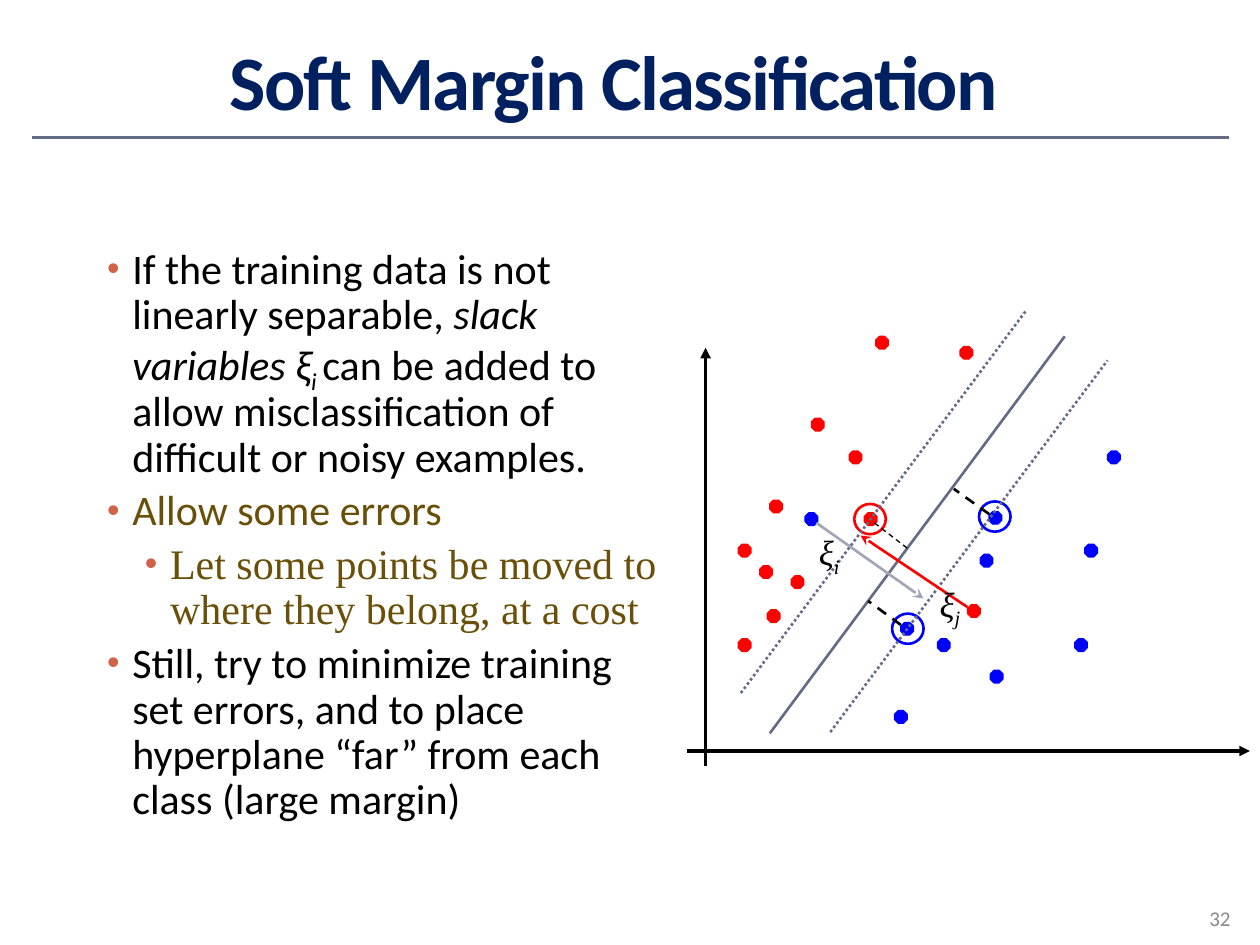
"""Build the slide on soft margin classification."""
from lxml.etree import SubElement as sub
from pptx import Presentation
from pptx.dml.color import RGBColor as RGB
from pptx.enum.dml import MSO_LINE as DASH
from pptx.enum.shapes import MSO_CONNECTOR as CONN, MSO_SHAPE as SHAPE
from pptx.enum.text import MSO_ANCHOR as ANCHOR, MSO_AUTO_SIZE as FIT, PP_ALIGN as ALIGN
from pptx.oxml.ns import qn
from pptx.util import Pt

PX = 9144
HUE = {"navy": "002060", "slate": "646B86", "pale": "A0A5B8", "black": "000000",
       "red": "FF0000", "blue": "0000FF", "olive": "694F07", "rust": "D16349",
       "gray": "898989"}
SANS, SERIF = "Calibri", "Times New Roman"


def add_run(para, text, size, face, hue, slant=False, drop=False):
    run = para.add_run()
    run.text = text
    font = run.font
    font.size, font.name, font.italic = Pt(size), face, slant
    font.color.rgb = RGB.from_string(HUE[hue])
    if drop:
        run._r.get_or_add_rPr().set("baseline", "-25000")
    return run


def add_line(ends, hue, width, dash=None, head=None):
    link = slide.shapes.add_connector(CONN.STRAIGHT, *[n * PX for n in ends])
    link.line.color.rgb = RGB.from_string(HUE[hue])
    link.line.width = Pt(width)
    if dash:
        link.line.dash_style = dash
    if head:
        sub(link.line._get_or_add_ln(), qn("a:tailEnd"), type=head)
    sub(link._element.spPr, qn("a:effectLst"))


deck = Presentation()
deck.slide_width, deck.slide_height = 1000 * PX, 750 * PX
slide = deck.slides.add_slide(deck.slide_layouts[1])

add_line((25, 109, 975, 109), "slate", 1.5)

title, body = slide.shapes.title, slide.placeholders[1]
for holder, box in ((title, (50, 17, 900, 92)), (body, (75, 192, 458, 533))):
    holder.left, holder.top, holder.width, holder.height = [n * PX for n in box]
    holder.text_frame.auto_size = FIT.NONE

title.text_frame.vertical_anchor = ANCHOR.MIDDLE
title.text_frame.margin_right = 36 * PX
para = title.text_frame.paragraphs[0]
para.alignment = ALIGN.CENTER
run = add_run(para, "Soft Margin Classification", 44, SANS, "navy")
run.font.bold = True
run._r.get_or_add_rPr().set("spc", "-100")

points = [
    (0, [("If the training data is not linearly separable, ", SANS, "black"),
         ("slack variables ξ", SANS, "black", True),
         ("i ", SANS, "black", True, True),
         ("can be added to allow misclassification of difficult or noisy examples.",
          SANS, "black")]),
    (0, [("Allow some errors", SANS, "olive")]),
    (1, [("Let some points be moved to where they belong, at a cost", SERIF, "olive")]),
    (0, [("Still, try to minimize training set errors, and to place hyperplane “far” "
          "from each class (large margin)", SANS, "black")]),
]
for row, (level, runs) in enumerate(points):
    frame = body.text_frame
    para = frame.add_paragraph() if row else frame.paragraphs[0]
    para.level, para.line_spacing = level, 0.9
    props = para._p.get_or_add_pPr()
    props.set("marL", str((20 + 30 * level) * PX))
    props.set("indent", str(-20 * PX))
    sub(sub(props, qn("a:buClr")), qn("a:srgbClr"), val=HUE["rust"])
    sub(props, qn("a:buSzPct"), val="85000")
    sub(props, qn("a:buFont"), typeface="Arial")
    sub(props, qn("a:buChar"), char="•")
    for text, *style in runs:
        add_run(para, text, 24, *style)

add_line((560, 608, 560, 276), "black", 2, head="triangle")
add_line((545, 596, 992, 596), "black", 2, head="triangle")

dots = {
    "red": [(674, 358), (611, 397), (628, 457), (586, 507), (644, 332), (586, 432),
            (603, 449), (686, 407), (695, 267), (762, 275), (609, 484), (768, 480)],
    "blue": [(785, 406), (744, 507), (853, 507), (710, 564), (778, 440), (715, 494),
             (786, 532), (861, 432), (879, 358), (639, 407)],
}
for hue, spots in dots.items():
    for x, y in spots:
        dot = slide.shapes.add_shape(SHAPE.OCTAGON, x * PX, y * PX, 10 * PX, 10 * PX)
        dot.shadow.inherit = False
        dot.fill.solid()
        dot.fill.fore_color.rgb = dot.line.color.rgb = RGB.from_string(HUE[hue])
        dot.line.width = Pt(0.75)

for x, y, hue in ((678, 400, "red"), (708, 487, "blue"), (777, 398, "blue")):
    ring = slide.shapes.add_shape(SHAPE.OVAL, x * PX, y * PX, 25 * PX, 24 * PX)
    ring.shadow.inherit = False
    ring.fill.background()
    ring.line.color.rgb = RGB.from_string(HUE[hue])
    ring.line.width = Pt(1.5)

add_line((611, 582, 845, 267), "slate", 1.5)
for ends in ((659, 581, 879, 286), (588, 550, 814, 247)):
    add_line(ends, "slate", 1.5, DASH.ROUND_DOT)
for ends, width in (((785, 408, 757, 388), 1.5), ((715, 496, 689, 477), 1.5),
                    ((720, 435, 694, 415), 0.75)):
    add_line(ends, "black", width, DASH.DASH)
add_line((768, 482, 683, 425), "red", 1.5, head="stealth")
add_line((648, 415, 733, 475), "pale", 1.5, head="stealth")

for x, y, mark in ((736, 457, "j"), (640, 416, "i")):
    label = slide.shapes.add_textbox(x * PX, y * PX, 77 * PX, 43 * PX)
    label.text_frame.word_wrap = True
    para = label.text_frame.paragraphs[0]
    add_run(para, "ξ", 20, SERIF, "black", True)
    add_run(para, mark, 20, SERIF, "black", True, True)

page = slide.shapes.add_textbox(950 * PX, 714 * PX, 50 * PX, 36 * PX)
page.text_frame.word_wrap = True
add_run(page.text_frame.paragraphs[0], "32", 12, SANS, "gray")

deck.save("out.pptx")
